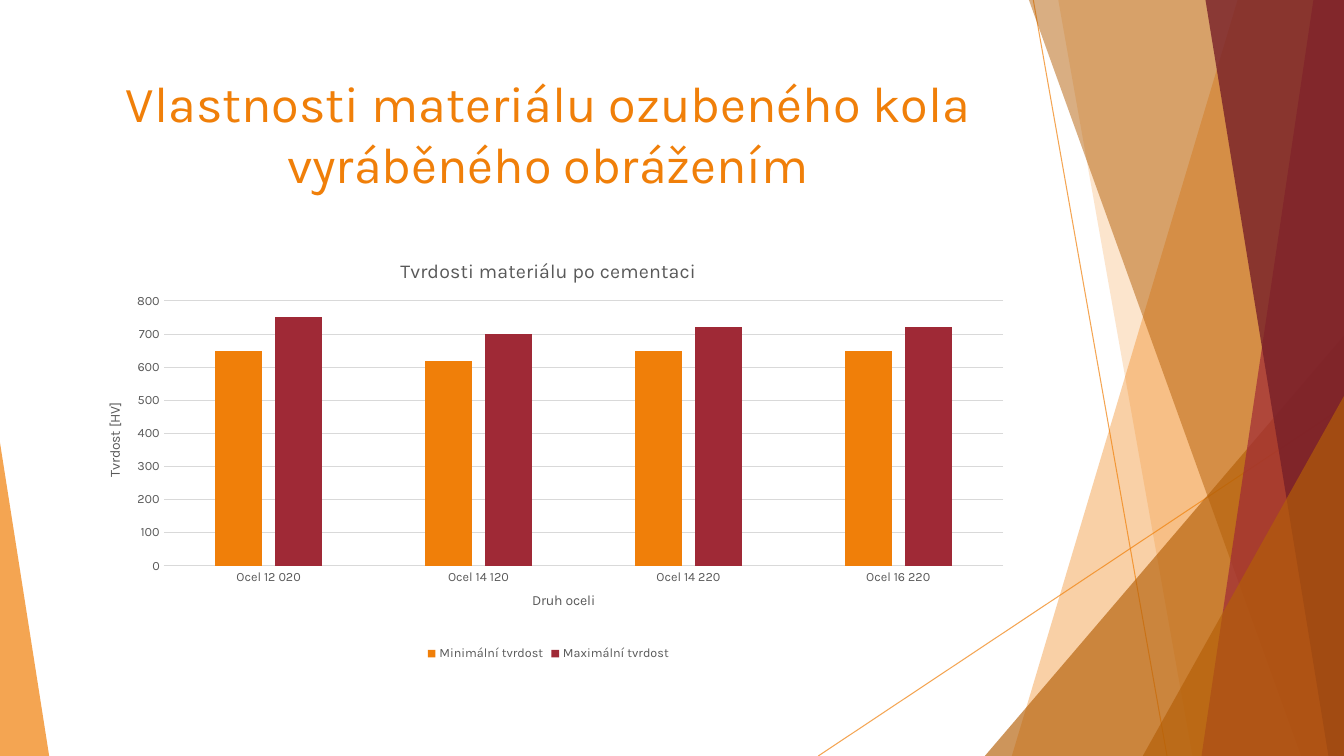
"""Build a slide with a column chart of steel hardness after carburizing."""
from dataclasses import dataclass

import pptx
import pptx.chart.data
import pptx.dml.color
import pptx.enum.chart
import pptx.enum.shapes
import pptx.enum.text
import pptx.oxml
import pptx.oxml.ns
import pptx.util
from pptx.util import Cm

FONT = "Karla"
WIDTH, HEIGHT = 33.87, 19.05
COLOURS = {
    "orange": "F07F09",
    "brown": "B45F07",
    "red": "9F2936",
    "wine": "771F28",
    "text": "595959",
    "grid": "D9D9D9",
}


@dataclass
class Ray:
    x1: float
    y1: float
    x2: float
    y2: float


@dataclass
class Band:
    """Area from a slanted left edge to the right side of the slide."""
    top: float
    bottom: float
    colour: str
    alpha: int


@dataclass
class Corner:
    left: float
    top: float
    width: float
    apex: float
    colour: str
    alpha: int


RAYS = [Ray(26.04, 0, 29.41, HEIGHT), Ray(WIDTH, 10.24, 20.62, HEIGHT)]
FACETS = [
    Band(31.19, 25.5, "orange", 36),
    Band(26.67, 30.05, "orange", 20),
    Corner(24.82, 8.46, 9.05, 1, "brown", 66),
    Band(25.93, 32.79, "brown", 50),
    Band(33.1, 30.28, "red", 70),
    Band(30.38, 33.48, "wine", 80),
    Corner(28.8, 9.98, 5.07, 1, "brown", 66),
    Corner(0, 11.15, 1.24, 0, "orange", 70),
]
STEELS = ["Ocel 12 020", "Ocel 14 120", "Ocel 14 220", "Ocel 16 220"]
SERIES = [
    ("Minimální tvrdost", [650, 620, 650, 650], "orange"),
    ("Maximální tvrdost", [750, 700, 720, 720], "red"),
]


def rgb(name: str) -> pptx.dml.color.RGBColor:
    """Return a colour of the palette."""
    return pptx.dml.color.RGBColor.from_string(COLOURS[name])


def set_font(font, size: float, colour: str) -> None:
    """Format a font."""
    font.name, font.size, font.bold = FONT, pptx.util.Pt(size), False
    font.color.rgb = rgb(colour)


def put_text(tf, text: str, *, size: float, colour: str = "text") -> None:
    """Write one centred paragraph."""
    p = tf.paragraphs[0]
    p.alignment = pptx.enum.text.PP_ALIGN.CENTER
    r = p.add_run()
    r.text = text
    set_font(r.font, size, colour)


def set_colour(fmt, colour: str, alpha: int) -> None:
    """Give a fill a solid, partly transparent colour."""
    fmt.solid()
    fmt.fore_color.rgb = rgb(colour)
    clr = fmt._xPr.find(".//" + pptx.oxml.ns.qn("a:srgbClr"))
    clr.append(pptx.oxml.parse_xml(
        f'<a:alpha {pptx.oxml.ns.nsdecls("a")} val="{alpha * 1000}"/>'))


def add_ray(s, ray: Ray) -> None:
    """Draw a thin slanted line."""
    line = s.shapes.add_connector(
        pptx.enum.shapes.MSO_CONNECTOR.STRAIGHT,
        Cm(ray.x1), Cm(ray.y1), Cm(ray.x2), Cm(ray.y2))
    line.line.width = pptx.util.Pt(0.75)
    set_colour(line.line.fill, "orange", 70)
    line._element.spPr.append(pptx.oxml.parse_xml(
        f'<a:effectLst {pptx.oxml.ns.nsdecls("a")}/>'))


def add_facet(s, facet: Band | Corner) -> None:
    """Draw a transparent band or corner triangle."""
    if isinstance(facet, Band):
        builder = s.shapes.build_freeform(Cm(facet.top), 0)
        builder.add_line_segments([
            (Cm(WIDTH), 0), (Cm(WIDTH), Cm(HEIGHT)), (Cm(facet.bottom), Cm(HEIGHT))])
        sp = builder.convert_to_shape()
    else:
        sp = s.shapes.add_shape(
            pptx.enum.shapes.MSO_SHAPE.ISOSCELES_TRIANGLE, Cm(facet.left),
            Cm(facet.top), Cm(facet.width), Cm(HEIGHT - facet.top))
        sp.adjustments[0] = facet.apex
    sp.shadow.inherit = False
    sp.line.fill.background()
    set_colour(sp.fill, facet.colour, facet.alpha)


def set_layout(parent, index: int, target: str = "", **fractions: float) -> None:
    """Place a chart part at fractions of the chart area."""
    for old in parent.findall(pptx.oxml.ns.qn("c:layout")):
        parent.remove(old)
    inner = f'<c:layoutTarget val="{target}"/>' if target else ""
    modes = "".join(f'<c:{k}Mode val="edge"/>' for k in "xy")
    values = "".join(f'<c:{k} val="{v}"/>' for k, v in fractions.items())
    parent.insert(index, pptx.oxml.parse_xml(
        f'<c:layout {pptx.oxml.ns.nsdecls("c")}><c:manualLayout>'
        f'{inner}{modes}{values}</c:manualLayout></c:layout>'))


def add_title(owner, text: str, size: float, x: float, y: float) -> None:
    """Title a chart or an axis at a fixed place."""
    title = owner.chart_title if hasattr(owner, "chart_title") else owner.axis_title
    put_text(title.text_frame, text, size=size)
    set_layout(title._element, 1, x=x, y=y)


def add_hardness_chart(s) -> None:
    """Draw the hardness chart."""
    data = pptx.chart.data.CategoryChartData()
    data.categories = STEELS
    for name, values, _ in SERIES:
        data.add_series(name, values)
    chart = s.shapes.add_chart(
        pptx.enum.chart.XL_CHART_TYPE.COLUMN_CLUSTERED,
        Cm(1.88), Cm(5.99), Cm(23.88), Cm(10.77), data).chart
    set_font(chart.font, 10, "text")
    plot = chart.plots[0]
    plot.gap_width, plot.overlap, plot.vary_by_categories = 219, -27, False
    for series, (_, _, colour) in zip(plot.series, SERIES):
        series.format.fill.solid()
        series.format.fill.fore_color.rgb = rgb(colour)

    cat, val = chart.category_axis, chart.value_axis
    for axis in (cat, val):
        axis.major_tick_mark = pptx.enum.chart.XL_TICK_MARK.NONE
        set_font(axis.tick_labels.font, 9, "text")
    val.minimum_scale, val.maximum_scale, val.major_unit = 0, 800, 100
    val.format.line.fill.background()
    for line in (cat.format.line, val.major_gridlines.format.line):
        line.color.rgb = rgb("grid")
        line.width = pptx.util.Pt(0.75)

    add_title(chart, "Tvrdosti materiálu po cementaci", 14, 0.34, 0.04)
    add_title(cat, "Druh oceli", 10, 0.48, 0.82)
    add_title(val, "Tvrdost [HV]", 10, 0.03, 0.38)
    set_layout(chart._chartSpace.chart.plotArea, 0, "inner",
               x=0.094, y=0.148, w=0.886, h=0.62)
    chart.has_legend = True
    chart.legend.position = pptx.enum.chart.XL_LEGEND_POSITION.BOTTOM
    chart.legend.include_in_layout = False
    set_font(chart.legend.font, 9, "text")


def main() -> None:
    """Build and save the slide."""
    prs = pptx.Presentation()
    prs.slide_width, prs.slide_height = Cm(WIDTH), Cm(HEIGHT)
    s = prs.slides.add_slide(prs.slide_layouts[5])
    for ray in RAYS:
        add_ray(s, ray)
    for facet in FACETS:
        add_facet(s, facet)
    title = s.shapes.title
    title.left, title.top, title.width, title.height = map(Cm, (1.88, 1.7, 23.88, 3.66))
    tf = title.text_frame
    tf.auto_size = pptx.enum.text.MSO_AUTO_SIZE.NONE
    tf.vertical_anchor = pptx.enum.text.MSO_ANCHOR.TOP
    put_text(tf, "Vlastnosti materiálu ozubeného kola vyráběného obrážením",
             size=36, colour="orange")
    add_hardness_chart(s)
    prs.save("out.pptx")


if __name__ == "__main__":
    main()
